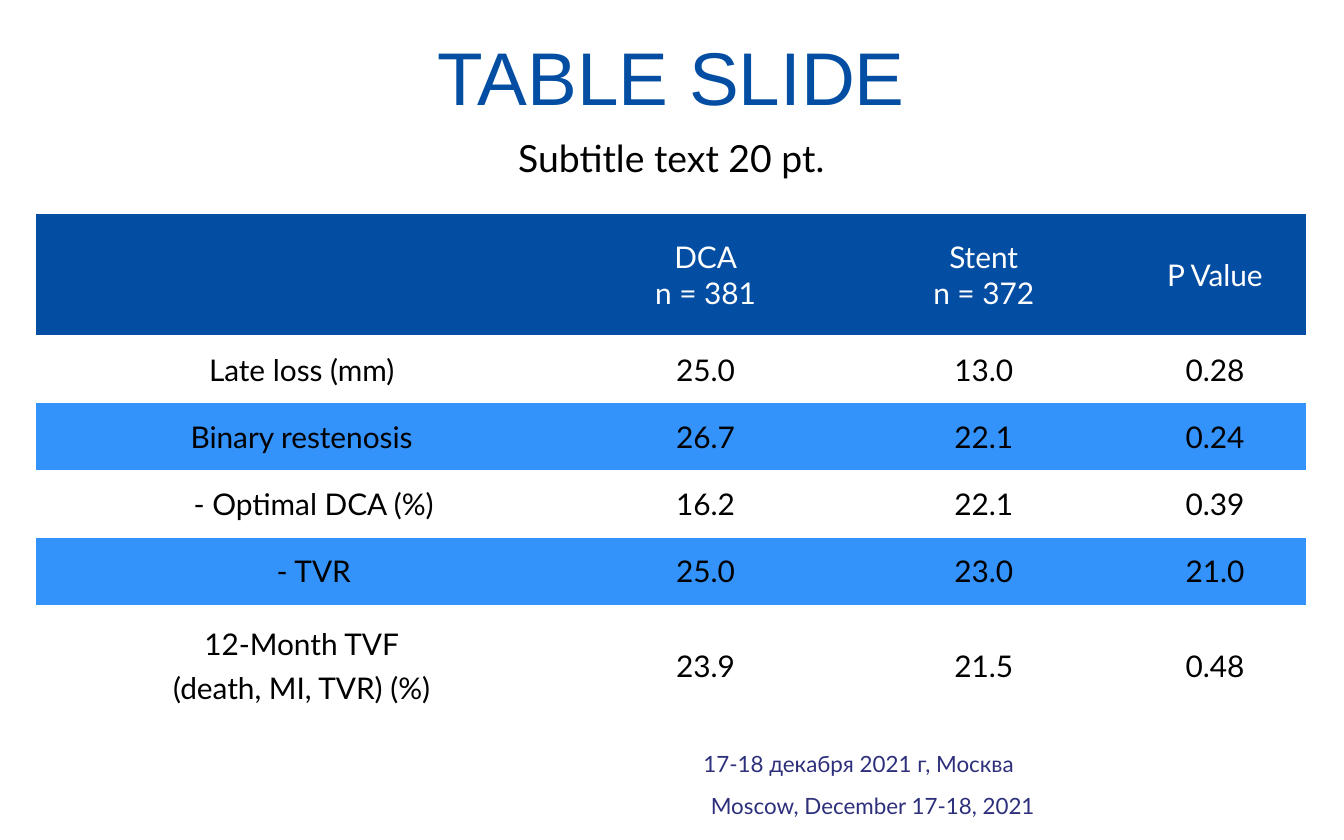
from lxml.etree import SubElement
from pptx import Presentation
from pptx.dml.color import RGBColor
from pptx.enum.text import MSO_ANCHOR, PP_ALIGN
from pptx.oxml.ns import qn
from pptx.util import Inches, Pt

NAVY = RGBColor(0x03, 0x4E, 0xA2)
SKY = RGBColor(0x34, 0x92, 0xFB)
INDIGO = RGBColor(0x2E, 0x30, 0x7C)
WHITE = RGBColor(0xFF, 0xFF, 0xFF)
BLACK = RGBColor(0x00, 0x00, 0x00)

NO_STYLE = "{2D5ABB26-0587-4C30-8999-92F81FD0307C}"
COL_WIDTHS = [3.95, 2.06, 2.08, 1.36]
ROW_HEIGHTS = [0.91, 0.5, 0.5, 0.5, 0.5, 0.91]
ROWS = [
    ["", "DCA\nn = 381", "Stent\nn = 372", "P Value"],
    ["Late loss (mm)", "25.0", "13.0", "0.28"],
    ["Binary restenosis", "26.7", "22.1", "0.24"],
    ["- Optimal DCA (%)", "16.2", "22.1", "0.39"],
    ["- TVR", "25.0", "23.0", "21.0"],
    ["12-Month TVF\n(death, MI, TVR) (%)", "23.9", "21.5", "0.48"],
]


def write_text(tf, text, size, color, font="Lato", gap=0, line=None):
    """Fill a text frame with one centred paragraph per line of text."""
    tf.word_wrap = True
    tf.vertical_anchor = MSO_ANCHOR.MIDDLE
    for i, words in enumerate(text.split("\n")):
        p = tf.add_paragraph() if i else tf.paragraphs[0]
        p.alignment = PP_ALIGN.CENTER
        p.space_before = Pt(gap if i else 0)
        if line:
            p.line_spacing = line
        r = p.add_run()
        r.text = words
        r.font.size = Pt(size)
        r.font.name = font
        r.font.color.rgb = color


def add_title(slide, left, top, width, height):
    """Place and format the title placeholder."""
    sp = slide.shapes.title
    sp.left, sp.top = Inches(left), Inches(top)
    sp.width, sp.height = Inches(width), Inches(height)
    tf = sp.text_frame
    tf.margin_left = tf.margin_right = Inches(0.05)
    write_text(tf, "TABLE SLIDE", 40, NAVY, font="Arial", line=0.9)


def add_subtitle(slide, left, top, width, height):
    """Add the subtitle under the title."""
    sp = slide.shapes.add_textbox(Inches(left), Inches(top), Inches(width), Inches(height))
    write_text(sp.text_frame, "Subtitle text 20 pt.", 20, BLACK, line=0.9)


def add_bottom_border(cell, color, width):
    """Draw a solid line along the bottom of a cell."""
    ln = SubElement(cell._tc.get_or_add_tcPr(), qn("a:lnB"), w=str(Pt(width)))
    fill = SubElement(ln, qn("a:solidFill"))
    SubElement(fill, qn("a:srgbClr"), val=str(color))


def add_results_table(slide, left, top, width, height):
    """Add the results table with a dark header and alternate bands."""
    frame = slide.shapes.add_table(len(ROWS), len(COL_WIDTHS), Inches(left), Inches(top),
                                   Inches(width), Inches(height))
    table = frame.table
    table.first_row = table.horz_banding = False
    table._tbl.tblPr.find(qn("a:tableStyleId")).text = NO_STYLE
    for column, w in zip(table.columns, COL_WIDTHS):
        column.width = Inches(w)
    for row, h in zip(table.rows, ROW_HEIGHTS):
        row.height = Inches(h)
    for i, values in enumerate(ROWS):
        for j, text in enumerate(values):
            cell = table.cell(i, j)
            cell.vertical_anchor = MSO_ANCHOR.MIDDLE
            header = i == 0
            if header:
                add_bottom_border(cell, WHITE, 1)
            if header or i in (2, 4):
                cell.fill.solid()
                cell.fill.fore_color.rgb = NAVY if header else SKY
            else:
                cell.fill.background()
            if text.startswith("-"):
                cell.margin_left = Inches(0.28)
            if text:
                write_text(cell.text_frame, text, 16, WHITE if header else BLACK,
                           gap=0 if header else 4.8)


def add_event_date(slide, left, top, width, height):
    """Add the event date in two languages, the second line set further right."""
    sp = slide.shapes.add_textbox(Inches(left), Inches(top), Inches(width), Inches(height))
    tf = sp.text_frame
    tf.margin_right = Inches(0.31)
    write_text(tf, "17-18 декабря 2021 г, Москва\nMoscow, December 17-18, 2021",
               12, INDIGO, gap=10, line=0.9)
    tf.paragraphs[1]._p.get_or_add_pPr().set("marL", str(Inches(0.21)))


def main():
    """Build the slide and save it."""
    prs = Presentation()
    prs.slide_width, prs.slide_height = Inches(10), Inches(6.25)
    slide = prs.slides.add_slide(prs.slide_layouts[5])
    add_event_date(slide, 4.52, 5.55, 3.95, 0.6)
    add_title(slide, 0.27, 0.21, 9.45, 0.79)
    add_subtitle(slide, 0.27, 1, 9.45, 0.39)
    add_results_table(slide, 0.27, 1.59, sum(COL_WIDTHS), sum(ROW_HEIGHTS))
    prs.save("out.pptx")


if __name__ == "__main__":
    main()
